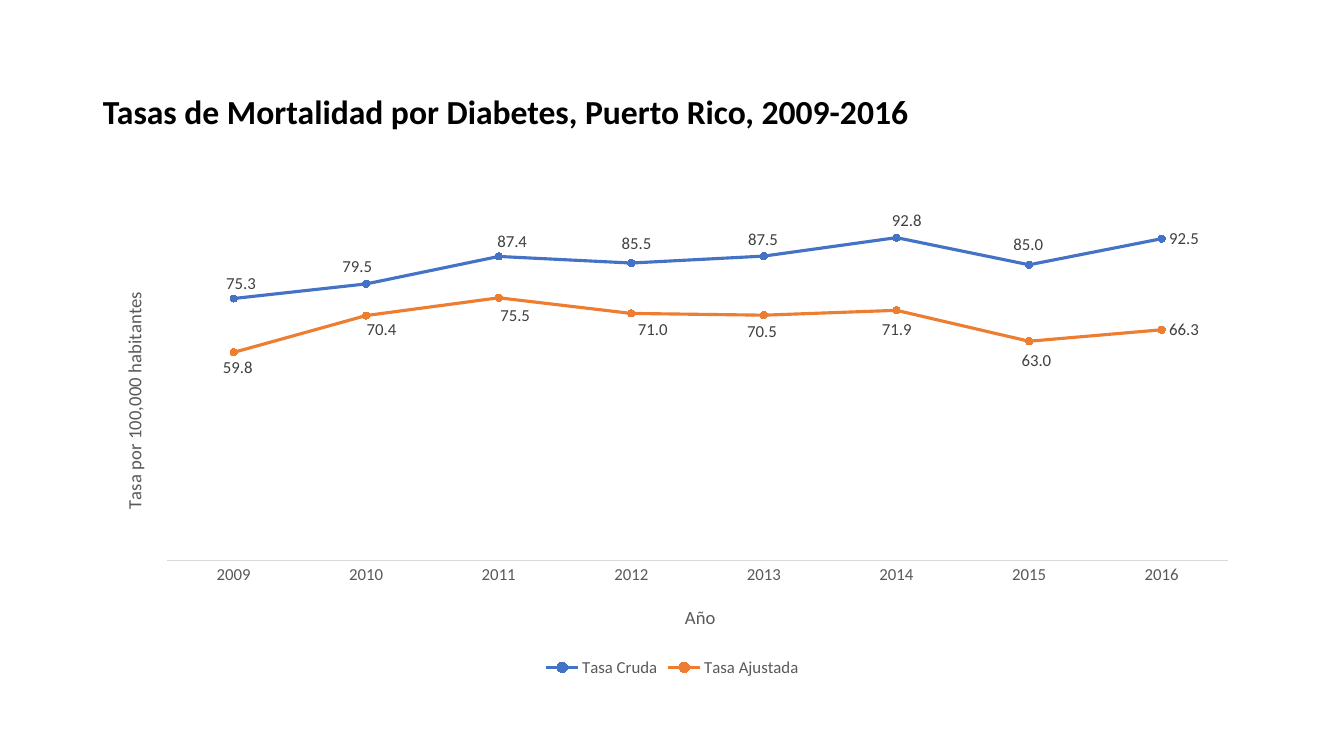
from pptx import Presentation
from pptx import util as u
from pptx.chart.data import CategoryChartData
from pptx.dml.color import RGBColor
from pptx.enum import chart as ch, text as tx
from pptx.oxml import parse_xml
from pptx.oxml.ns import nsdecls

# Content
TITLE = "Tasas de Mortalidad por Diabetes, Puerto Rico, 2009-2016"
X_TITLE, Y_TITLE = "Año", "Tasa por 100,000 habitantes"
YEARS = [str(y) for y in range(2009, 2017)]
RATES = {
    "Tasa Cruda": [75.3, 79.5, 87.4, 85.5, 87.5, 92.8, 85.0, 92.5],
    "Tasa Ajustada": [59.8, 70.4, 75.5, 71.0, 70.5, 71.9, 63.0, 66.3],
}
# Label shifts in inches from the right of each point
SHIFTS = {
    "Tasa Cruda": [(-.15, -.15), (-.31, -.17), (-.09, -.15), (-.17, -.19),
                   (-.23, -.16), (-.12, -.17), (-.23, -.2)],
    "Tasa Ajustada": [(-.18, .15), (-.07, .14), (-.06, .18), (-.01, .16),
                      (-.24, .16), (-.22, .19), (-.15, .19)],
}


class Theme:
    font = "Calibri"
    ink, gray, label, rule = "000000", "595959", "404040", "D9D9D9"
    lines = ["4472C4", "ED7D31"]
    head, axis, small = 24, 13.3, 12


LEFT, WIDE = 0.92, 11.5
TOP, HIGH = 2, 4.76


def style(font, size, color, bold=False):
    font.name, font.size, font.bold = Theme.font, u.Pt(size), bold
    font.color.rgb = RGBColor.from_string(color)


def write(frame, words, size, color, bold=False):
    frame.text = words
    style(frame.paragraphs[0].runs[0].font, size, color, bold)


def place(node, at, x, y, size=None, edge=True):
    """Set a manual layout, in inches within the chart."""
    parts = []
    if size:
        parts.append('<c:layoutTarget val="inner"/>')
    if edge:
        parts.append('<c:xMode val="edge"/><c:yMode val="edge"/>')
    vals = {"x": x / WIDE, "y": y / HIGH}
    if size:
        vals.update(w=size[0] / WIDE, h=size[1] / HIGH)
    parts += [f'<c:{k} val="{v:.4f}"/>' for k, v in vals.items()]
    for old in node.xpath("c:layout"):
        node.remove(old)
    node.insert(at, parse_xml(
        f'<c:layout {nsdecls("c")}><c:manualLayout>{"".join(parts)}'
        '</c:manualLayout></c:layout>'))


prs = Presentation()
prs.slide_width, prs.slide_height = u.Inches(13.33), u.Inches(7.5)
slide = prs.slides.add_slide(prs.slide_layouts[5])

# Title
head = slide.shapes.title
head.left, head.top = u.Inches(LEFT), u.Inches(0.4)
head.width, head.height = u.Inches(WIDE), u.Inches(1.45)
write(head.text_frame, TITLE, Theme.head, Theme.ink, bold=True)
head.text_frame.vertical_anchor = tx.MSO_ANCHOR.MIDDLE
para = head.text_frame.paragraphs[0]
para.alignment, para.line_spacing = tx.PP_ALIGN.LEFT, 0.9

# Chart
data = CategoryChartData(number_format="0.0")
data.categories = YEARS
for name, vals in RATES.items():
    data.add_series(name, vals)
chart = slide.shapes.add_chart(
    ch.XL_CHART_TYPE.LINE_MARKERS, u.Inches(LEFT), u.Inches(TOP),
    u.Inches(WIDE), u.Inches(HIGH), data).chart
style(chart.font, 10, Theme.ink)
chart.has_title = False
chart.plots[0].vary_by_categories = False
place(chart._chartSpace.chart.plotArea, 0, 0.74, 0.11, (10.52, 3.45))

# Legend
chart.has_legend = True
chart.legend.position = ch.XL_LEGEND_POSITION.BOTTOM
chart.legend.include_in_layout = False
style(chart.legend.font, Theme.small, Theme.gray)

# Axes
years, rates = chart.category_axis, chart.value_axis
for axis, words, x, y in ((years, X_TITLE, 5.84, 3.96),
                          (rates, Y_TITLE, 0.25, 0.86)):
    axis.has_major_gridlines = False
    write(axis.axis_title.text_frame, words, Theme.axis, Theme.gray)
    place(axis.axis_title._element, 1, x, y)
rates.axis_title.text_frame._txBody.bodyPr.set("rot", "-5400000")
rates.minimum_scale, rates.maximum_scale = 0, 100
rates.tick_labels.number_format = "0.0"
rates.visible = False
years.major_tick_mark = ch.XL_TICK_MARK.NONE
style(years.tick_labels.font, Theme.small, Theme.gray)
years.format.line.color.rgb = RGBColor.from_string(Theme.rule)
years.format.line.width = u.Pt(0.75)

# Series and their labels
for line, color in zip(chart.plots[0].series, Theme.lines):
    rgb = RGBColor.from_string(color)
    line.smooth = False
    line.format.line.color.rgb = rgb
    line.format.line.width = u.Pt(2.25)
    mark = line.marker
    mark.style, mark.size = ch.XL_MARKER_STYLE.CIRCLE, 5
    mark.format.fill.solid()
    mark.format.fill.fore_color.rgb = rgb
    mark.format.line.color.rgb = rgb
    tags = line.data_labels
    tags.show_value, tags.position = True, ch.XL_LABEL_POSITION.RIGHT
    style(tags.font, Theme.small, Theme.label)
    for i, (dx, dy) in enumerate(SHIFTS[line.name]):
        tag = line.points[i].data_label
        tag.position = ch.XL_LABEL_POSITION.RIGHT
        style(tag.font, Theme.small, Theme.label)
        node = tags._element.xpath(f"c:dLbl[c:idx/@val='{i}']")[0]
        place(node, 1, dx, dy, edge=False)

prs.save("out.pptx")
